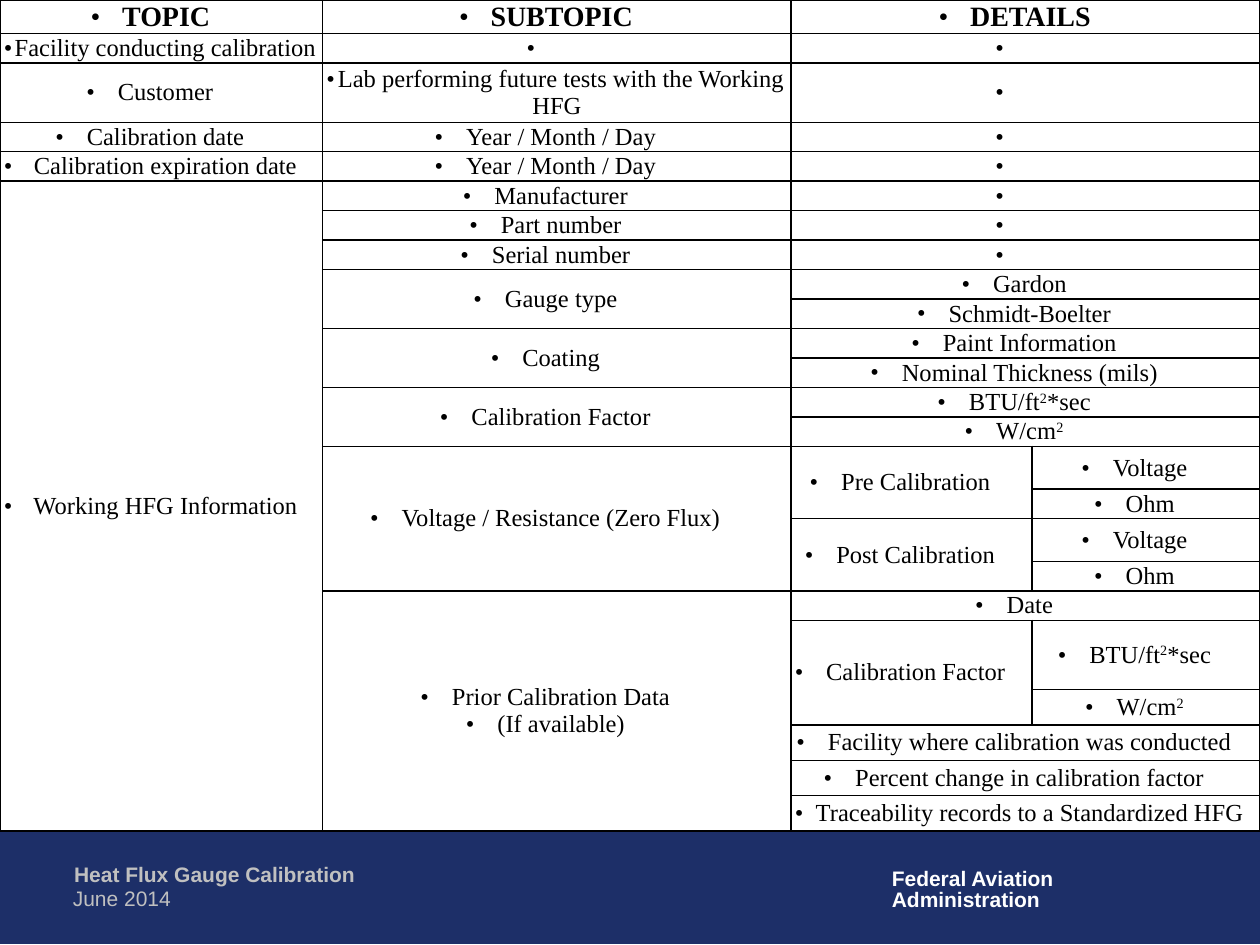
from lxml import etree
from pptx import Presentation
from pptx.dml.color import RGBColor
from pptx.enum.shapes import MSO_SHAPE
from pptx.enum.text import MSO_ANCHOR, PP_ALIGN
from pptx.oxml.ns import qn
from pptx.util import Inches, Pt

CENTER, MIDDLE = PP_ALIGN.CENTER, MSO_ANCHOR.MIDDLE
RECTANGLE = MSO_SHAPE.RECTANGLE

THEME = {
    "ink": "000000", "navy": "1D2F68", "white": "FFFFFF", "silver": "C0C0C0",
    "table_font": "Times New Roman", "footer_font": "Arial",
    "header_size": 16, "cell_size": 14, "footer_size": 12,
}

# Content: UP continues the cell above, LEFT continues the cell to the left.
# A caret pair encloses a superscript; a blank entry shows only its bullet.
UP, LEFT, BLANK = "<up>", "<left>", " "
BTU, WATT = "BTU/ft^2^*sec", "W/cm^2^"
ROWS = [
    ("TOPIC", "SUBTOPIC", "DETAILS", LEFT),
    ("Facility conducting calibration", BLANK, BLANK, LEFT),
    ("Customer", "Lab performing future tests with the Working HFG", BLANK, LEFT),
    ("Calibration date", "Year / Month / Day", BLANK, LEFT),
    ("Calibration expiration date", "Year / Month / Day", BLANK, LEFT),
    ("Working HFG Information", "Manufacturer", BLANK, LEFT),
    (UP, "Part number", BLANK, LEFT),
    (UP, "Serial number", BLANK, LEFT),
    (UP, "Gauge type", "Gardon", LEFT),
    (UP, UP, "Schmidt-Boelter", LEFT),
    (UP, "Coating", "Paint Information", LEFT),
    (UP, UP, "Nominal Thickness (mils)", LEFT),
    (UP, "Calibration Factor", BTU, LEFT),
    (UP, UP, WATT, LEFT),
    (UP, "Voltage / Resistance (Zero Flux)", "Pre Calibration", "Voltage"),
    (UP, UP, UP, "Ohm"),
    (UP, UP, "Post Calibration", "Voltage"),
    (UP, UP, UP, "Ohm"),
    (UP, "Prior Calibration Data\n(If available)", "Date", LEFT),
    (UP, UP, "Calibration Factor", BTU),
    (UP, UP, UP, WATT),
    (UP, UP, "Facility where calibration was conducted", LEFT),
    (UP, UP, "Percent change in calibration factor", LEFT),
    (UP, UP, "Traceability records to a Standardized HFG", LEFT),
]
COLUMN_WIDTHS = [2.56, 3.72, 1.91, 1.81]
TABLE_HEIGHT = 6.59
SPECIAL_HEIGHTS = {0: 0.26, 2: 0.47, 14: 0.34, 16: 0.34, 19: 0.55,
                   20: 0.28, 21: 0.28, 22: 0.28, 23: 0.28}

# left, top, width, height, lines, colour, bold, line spacing, wrap
FOOTERS = [
    (6.98, 6.85, 1.5, 0.44, ["Federal Aviation", "Administration"], "white", True, 0.85, False),
    (0.49, 6.79, 5.23, 0.3, ["Heat Flux Gauge Calibration"], "silver", True, 1, True),
    (0.48, 6.98, 4.09, 0.3, ["June 2014"], "silver", False, 1, True),
]


def color(name):
    return RGBColor.from_string(THEME[name])


def add_run(paragraph, text, font, size, ink, bold):
    run = paragraph.add_run()
    run.text = text
    run.font.name, run.font.size = THEME[font], Pt(THEME[size])
    run.font.bold, run.font.color.rgb = bold, color(ink)
    return run


def add_bullet(paragraph):
    properties = paragraph._p.get_or_add_pPr()
    properties.set("marL", "0")
    properties.set("indent", str(-Inches(0.25)))
    etree.SubElement(properties, qn("a:buFont")).set("typeface", THEME["table_font"])
    etree.SubElement(properties, qn("a:buChar")).set("char", "•")


def add_borders(cell):
    properties = cell._tc.get_or_add_tcPr()
    for position, side in enumerate(("lnL", "lnR", "lnT", "lnB")):
        border = etree.Element(qn(f"a:{side}"), w=str(Pt(1)))
        fill = etree.SubElement(border, qn("a:solidFill"))
        etree.SubElement(fill, qn("a:srgbClr")).set("val", THEME["ink"])
        properties.insert(position, border)


def fill_cell(cell, text, is_header):
    size = "header_size" if is_header else "cell_size"
    for index, line in enumerate(text.split("\n")):
        frame = cell.text_frame
        paragraph = frame.add_paragraph() if index else frame.paragraphs[0]
        paragraph.alignment = CENTER
        add_bullet(paragraph)
        for part, segment in enumerate(line.split("^")):
            if segment:
                run = add_run(paragraph, segment, "table_font", size, "ink", is_header)
                if part % 2:
                    run._r.get_or_add_rPr().set("baseline", "30000")


def span_end(row, column):
    """Last row and column covered by the cell that starts here."""
    last_row, last_column = row, column
    while last_row + 1 < len(ROWS) and ROWS[last_row + 1][column] == UP:
        last_row += 1
    while last_column + 1 < len(ROWS[row]) and ROWS[row][last_column + 1] == LEFT:
        last_column += 1
    return last_row, last_column


def add_calibration_table(slide):
    table = slide.shapes.add_table(len(ROWS), len(COLUMN_WIDTHS), 0, 0,
                                   Inches(10), Inches(TABLE_HEIGHT)).table
    table.first_row = table.horz_banding = False
    for column, width in zip(table.columns, COLUMN_WIDTHS):
        column.width = Inches(width)
    regular = (TABLE_HEIGHT - sum(SPECIAL_HEIGHTS.values())) / (len(ROWS) - len(SPECIAL_HEIGHTS))
    for r, entries in enumerate(ROWS):
        table.rows[r].height = Inches(SPECIAL_HEIGHTS.get(r, regular))
        for c, text in enumerate(entries):
            cell = table.cell(r, c)
            cell.margin_left = cell.margin_right = Inches(0.03)
            cell.margin_top = cell.margin_bottom = 0
            cell.vertical_anchor = MIDDLE
            cell.fill.background()
            add_borders(cell)
            if text in (UP, LEFT):
                continue
            end = span_end(r, c)
            if end != (r, c):
                cell.merge(table.cell(*end))
            fill_cell(cell, text, r == 0)


def add_footer(slide):
    # Navy band
    band = slide.shapes.add_shape(RECTANGLE, 0, Inches(6.6), Inches(10), Inches(0.89))
    band.shadow.inherit = False
    band.fill.solid()
    band.fill.fore_color.rgb = band.line.color.rgb = color("navy")
    band.line.width = Pt(0.75)
    # Agency, subject and date
    for left, top, width, height, lines, ink, bold, spacing, wrap in FOOTERS:
        label = slide.shapes.add_textbox(*map(Inches, (left, top, width, height)))
        frame = label.text_frame
        frame.word_wrap = wrap
        for index, line in enumerate(lines):
            paragraph = frame.add_paragraph() if index else frame.paragraphs[0]
            paragraph.line_spacing = spacing
            add_run(paragraph, line, "footer_font", "footer_size", ink, bold)


def main():
    deck = Presentation()
    deck.slide_width, deck.slide_height = Inches(10), Inches(7.5)
    slide = deck.slides.add_slide(deck.slide_layouts[6])
    add_footer(slide)
    add_calibration_table(slide)
    deck.save("out.pptx")


if __name__ == "__main__":
    main()
